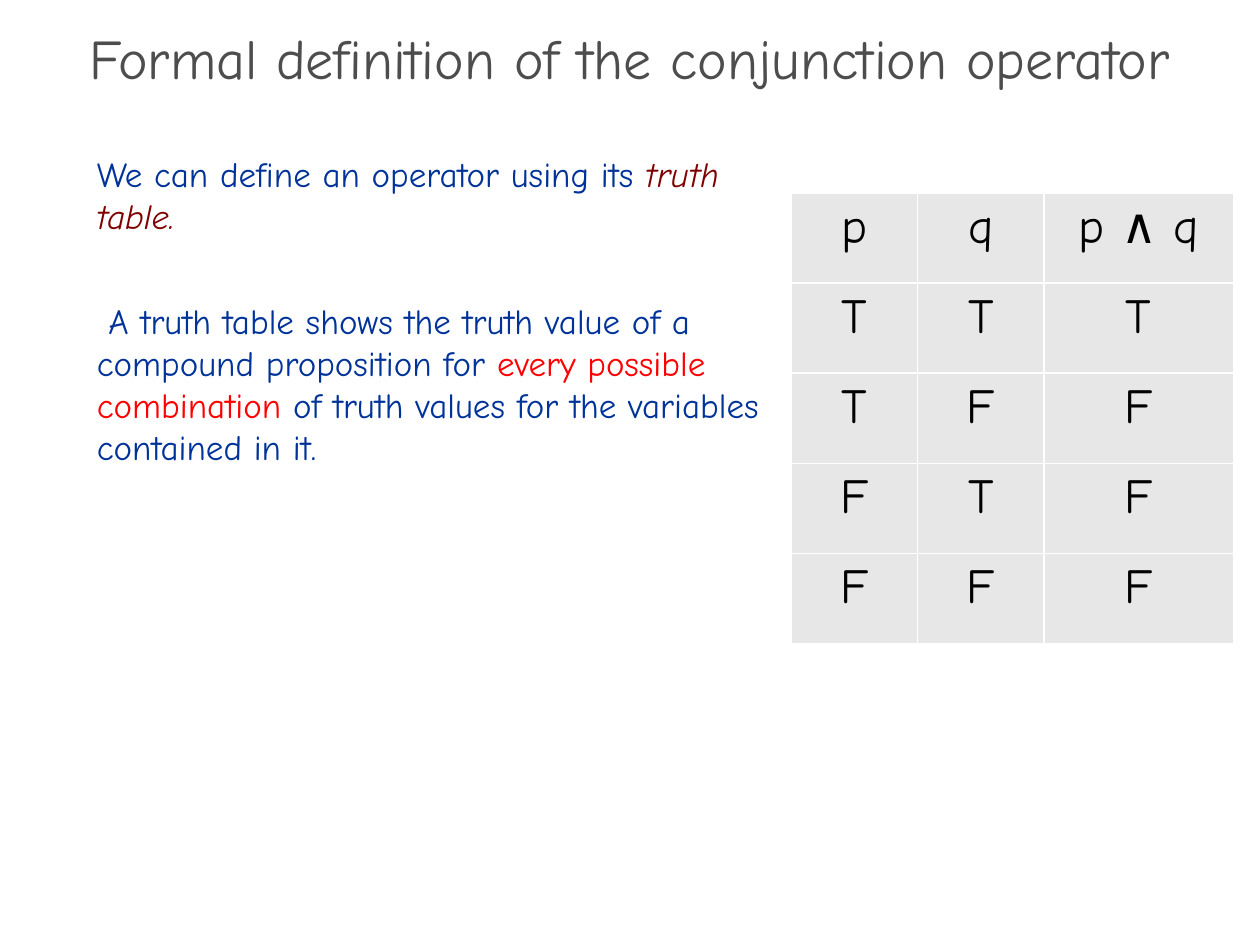
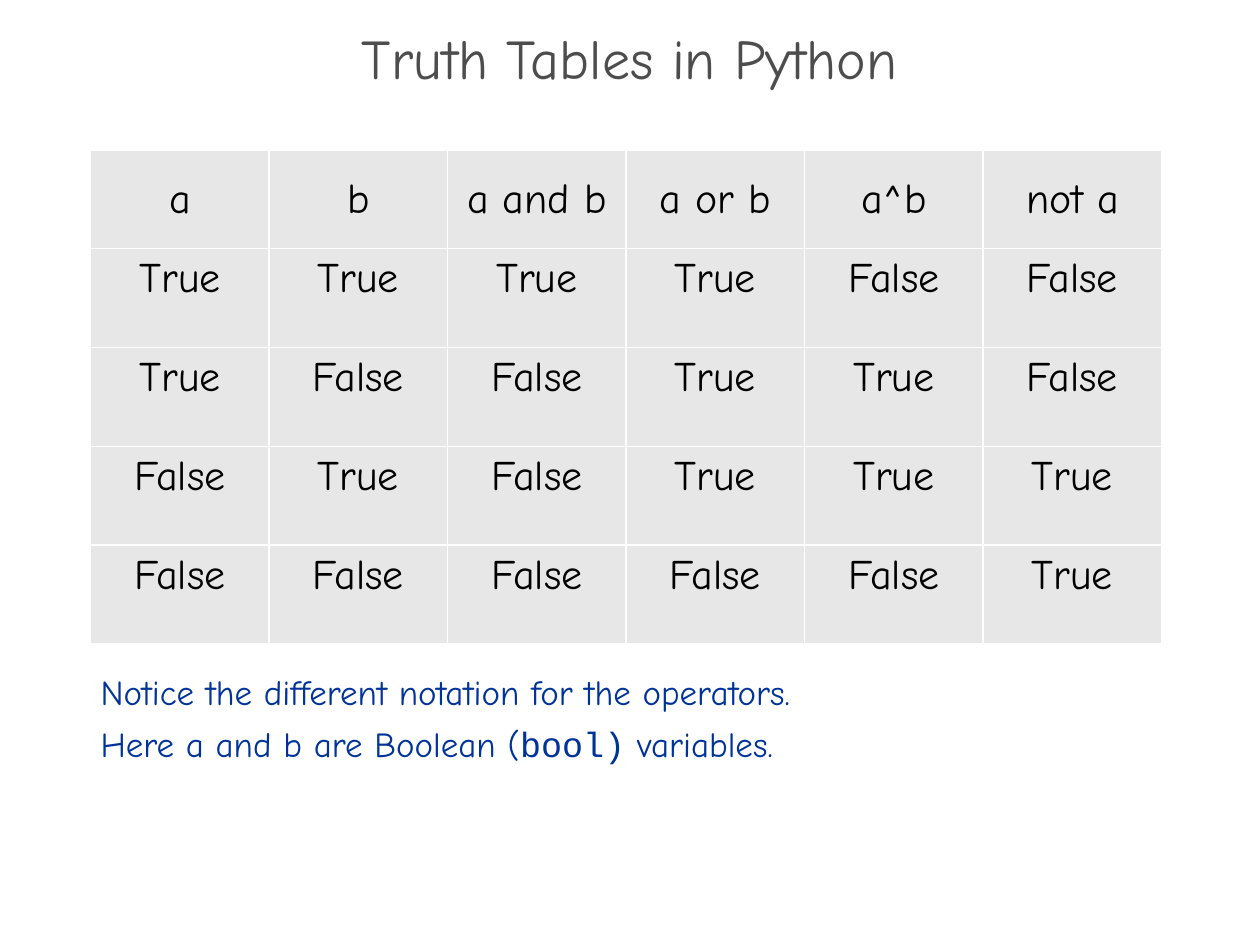
from itertools import product

from pptx import Presentation
from pptx.dml.color import RGBColor
from pptx.enum.text import MSO_ANCHOR, MSO_AUTO_SIZE, PP_ALIGN
from pptx.oxml.ns import qn
from pptx.util import Emu, Pt
from lxml.etree import SubElement

EMU_PER_PX = 9144
TITLE_ONLY = 5
CENTER = PP_ALIGN.CENTER
TOP, MIDDLE = MSO_ANCHOR.TOP, MSO_ANCHOR.MIDDLE
NO_AUTOFIT = MSO_AUTO_SIZE.NONE

FONT = "Comic Neue"
CODE_FONT = "Courier New"
GRAY = RGBColor(0x4D, 0x4D, 0x4D)
BLUE = RGBColor(0x00, 0x33, 0x99)
MAROON = RGBColor(0x80, 0x00, 0x00)
RED = RGBColor(0xFF, 0x00, 0x00)
BLACK = RGBColor(0x00, 0x00, 0x00)
WHITE = RGBColor(0xFF, 0xFF, 0xFF)
CELL_GRAY = RGBColor(0xE7, 0xE7, 0xE7)


def px(n):
    return Emu(n * EMU_PER_PX)


def box(left, top, width, height):
    return [px(n) for n in (left, top, width, height)]


def format_run(r, size, color, font=FONT, italic=False):
    r.font.name = font
    r.font.size = Pt(size)
    r.font.color.rgb = color
    r.font.italic = italic
    r.font.bold = False


def add_titled_slide(prs, title):
    s = prs.slides.add_slide(prs.slide_layouts[TITLE_ONLY])
    s.background.fill.solid()
    s.background.fill.fore_color.rgb = WHITE
    sp = s.shapes.title
    sp.left, sp.top, sp.width, sp.height = box(0, 27, 1000, 50)
    tf = sp.text_frame
    tf.text = title
    tf.auto_size = NO_AUTOFIT
    tf.vertical_anchor = MIDDLE
    p = tf.paragraphs[0]
    p.alignment = CENTER
    p.line_spacing = 0.7
    format_run(p.runs[0], 32, GRAY)
    return s


def add_body(s, place, paragraphs, gap=0):
    tf = s.shapes.add_textbox(*box(*place)).text_frame
    tf.word_wrap = True
    for i, runs in enumerate(paragraphs):
        p = tf.add_paragraph() if i else tf.paragraphs[0]
        p.space_before = Pt(gap if i else 0)
        p.space_after = Pt(6)
        for text, style in runs:
            r = p.add_run()
            r.text = text
            format_run(r, 20, **{"color": BLUE, **style})


def add_borders(cell):
    tcPr = cell._tc.get_or_add_tcPr()
    for side in ("a:lnL", "a:lnR", "a:lnT", "a:lnB"):
        ln = SubElement(tcPr, qn(side), w=str(Pt(1)))
        fill = SubElement(ln, qn("a:solidFill"))
        SubElement(fill, qn("a:srgbClr"), val=str(WHITE))


def format_cell(cell, text, size, anchor):
    add_borders(cell)
    cell.fill.solid()
    cell.fill.fore_color.rgb = CELL_GRAY
    cell.vertical_anchor = anchor
    cell.text_frame.text = text
    p = cell.text_frame.paragraphs[0]
    p.alignment = CENTER
    spacing = SubElement(p._p.get_or_add_pPr(), qn("a:spcBef"))
    SubElement(spacing, qn("a:spcPct"), val="20000")
    format_run(p.runs[0], size, BLACK)


def add_truth_table(s, place, header, rows, weights, size, header_anchor=TOP):
    left, top, width, height = box(*place)
    table = s.shapes.add_table(len(rows) + 1, len(header), left, top, width, height).table
    table.first_row = False
    table.horz_banding = False
    for column, weight in zip(table.columns, weights):
        column.width = Emu(round(width * weight / sum(weights)))
    for i, values in enumerate([header, *rows]):
        for j, text in enumerate(values):
            format_cell(table.cell(i, j), text, size, TOP if i else header_anchor)


def build_conjunction(prs):
    s = add_titled_slide(prs, "Formal definition of the conjunction operator")
    add_body(s, (67, 116, 553, 572), [
        [("We can define an operator using its ", {}),
         ("truth table.", {"color": MAROON, "italic": True})],
        [(" A truth table shows the truth value of a compound proposition for ", {}),
         ("every possible combination ", {"color": RED}),
         ("of truth values for the variables contained in it.", {})],
    ], gap=30)
    rows = [["T" if value else "F" for value in (p, q, p and q)]
            for p, q in product((True, False), repeat=2)]
    add_truth_table(s, (628, 153, 351, 358), ["p", "q", "p ∧ q"], rows, (2, 2, 3), 28)


def build_python_tables(prs):
    s = add_titled_slide(prs, "Truth Tables in Python")
    add_body(s, (70, 527, 900, 87), [
        [("Notice the different notation for the operators.", {})],
        [("Here a and b are Boolean (", {}),
         ("bool)", {"font": CODE_FONT}),
         (" variables.", {})],
    ])
    header = ["a", "b", "a and b", "a or b", "a^b", "not a"]
    rows = [[str(value) for value in (a, b, a and b, a or b, a ^ b, not a)]
            for a, b in product((True, False), repeat=2)]
    add_truth_table(s, (72, 119, 850, 392), header, rows, [1] * len(header), 24, MIDDLE)


def main():
    prs = Presentation()
    prs.slide_width, prs.slide_height = px(1000), px(750)
    build_conjunction(prs)
    build_python_tables(prs)
    prs.save("out.pptx")


if __name__ == "__main__":
    main()
